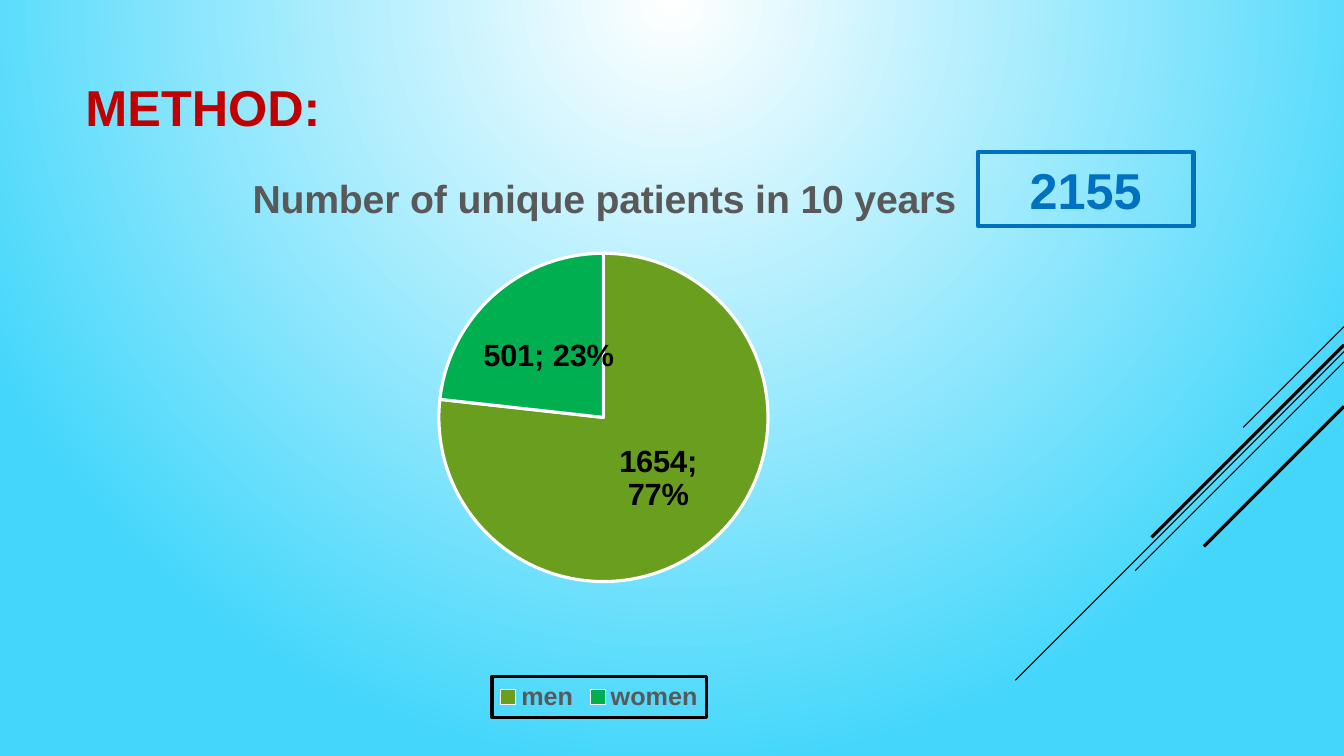
"""Build the slide on unique patients by sex."""
import dataclasses

import lxml.etree
import pptx
import pptx.chart.data
import pptx.dml.color
import pptx.enum.chart
import pptx.enum.shapes
import pptx.enum.text
import pptx.oxml
import pptx.oxml.ns
import pptx.util
from pptx.util import Cm


@dataclasses.dataclass(frozen=True)
class Theme:
    """Colours, fonts and type sizes of the slide."""
    centre: str = "FFFFFF"
    edge: str = "45D7FB"
    ink: str = "000000"
    heading: str = "C00000"
    muted: str = "595959"
    accent: str = "0070C0"
    men: str = "6A9E1F"
    women: str = "00B050"
    font: str = "Arial"
    chart_font: str = "League Spartan"
    heading_size: int = 36
    caption_size: int = 28
    label_size: int = 22
    legend_size: int = 18
    chart_size: int = 10


THEME = Theme()
WIDTH, HEIGHT = 33.87, 19.05
STRIPES = [
    (8.23, 2.54, 0.75),
    (8.86, 8.28, 0.75),
    (9.12, 5.26, 0.75),
    (8.69, 4.85, 2.25),
    (10.24, 3.53, 2.25),
]


def rgb(value):
    """Return a colour object for a hex value."""
    return pptx.dml.color.RGBColor.from_string(value)


def style_font(font, size, colour, bold=True, name=THEME.font):
    """Set the looks of a font."""
    font.name, font.size, font.bold = name, pptx.util.Pt(size), bold
    font.color.rgb = rgb(colour)


def style_line(line, colour, width):
    """Set the colour and width of a line."""
    line.color.rgb = rgb(colour)
    line.width = pptx.util.Pt(width)


def write(para, text, size, colour):
    """Add one styled run to a paragraph."""
    span = para.add_run()
    span.text = text
    style_font(span.font, size, colour)


def paint_background(page):
    """Fill the page with a round gradient centred on its top edge."""
    fill = page.background.fill
    fill.gradient()
    for stop, colour, position in zip(fill.gradient_stops, (THEME.centre, THEME.edge), (0, 1)):
        stop.color.rgb = rgb(colour)
        stop.position = position
    gradient = page.background._cSld.find(".//" + pptx.oxml.ns.qn("a:gradFill"))
    for linear in gradient.findall(pptx.oxml.ns.qn("a:lin")):
        gradient.remove(linear)
    gradient.append(pptx.oxml.parse_xml(
        f'<a:path {pptx.oxml.ns.nsdecls("a")} path="circle">'
        '<a:fillToRect l="0" t="0" r="0" b="100000"/></a:path>'))


def add_stripe(page, top, reach, weight):
    """Draw a diagonal line down and left from the right edge."""
    stripe = page.shapes.add_connector(
        pptx.enum.shapes.MSO_CONNECTOR.STRAIGHT,
        Cm(WIDTH), Cm(top), Cm(WIDTH - reach), Cm(top + reach))
    style_line(stripe.line, THEME.ink, weight)
    lxml.etree.SubElement(stripe._element.spPr, pptx.oxml.ns.qn("a:effectLst"))


def add_heading(page, text):
    """Move and fill the title placeholder."""
    title = page.shapes.title
    title.left, title.top, title.width, title.height = Cm(1.9), Cm(0.58), Cm(23.7), Cm(4.19)
    title.text_frame.vertical_anchor = pptx.enum.text.MSO_ANCHOR.MIDDLE
    para = title.text_frame.paragraphs[0]
    para.alignment = pptx.enum.text.PP_ALIGN.LEFT
    write(para, text, THEME.heading_size, THEME.heading)


def add_total(page, text):
    """Add the framed total."""
    box = page.shapes.add_shape(
        pptx.enum.shapes.MSO_SHAPE.RECTANGLE, Cm(24.64), Cm(3.84), Cm(5.44), Cm(1.85))
    box.shadow.inherit = False
    box.fill.background()
    style_line(box.line, THEME.accent, 3)
    frame = box.text_frame
    frame.word_wrap = True
    frame.vertical_anchor = pptx.enum.text.MSO_ANCHOR.MIDDLE
    para = frame.paragraphs[0]
    para.alignment = pptx.enum.text.PP_ALIGN.CENTER
    write(para, text, THEME.heading_size, THEME.accent)


def place(element, index, inner=False, **shares):
    """Give a chart part a manual layout in shares of the chart."""
    for layout in element.findall(pptx.oxml.ns.qn("c:layout")):
        element.remove(layout)
    target = '<c:layoutTarget val="inner"/>' if inner else ""
    modes = '<c:xMode val="edge"/><c:yMode val="edge"/>'
    values = "".join(f'<c:{key} val="{share}"/>' for key, share in shares.items())
    element.insert(index, pptx.oxml.parse_xml(
        f'<c:layout {pptx.oxml.ns.nsdecls("c")}><c:manualLayout>'
        f'{target}{modes}{values}</c:manualLayout></c:layout>'))


def add_caption(chart, text):
    """Set the chart title."""
    chart.has_title = True
    title = chart.chart_title
    write(title.text_frame.paragraphs[0], text, THEME.caption_size, THEME.muted)
    title.include_in_layout = False
    place(title._element, 1, x=0.17, y=0.05)


def add_legend(chart):
    """Add the framed legend below the pie."""
    chart.has_legend = True
    legend = chart.legend
    legend.position = pptx.enum.chart.XL_LEGEND_POSITION.BOTTOM
    legend.include_in_layout = False
    style_font(legend.font, THEME.legend_size, THEME.muted)
    place(legend._element, 1, x=0.4, y=0.93, w=0.2, h=0.07)
    frame = pptx.oxml.parse_xml(
        f'<c:spPr {pptx.oxml.ns.nsdecls("c", "a")}><a:noFill/><a:ln w="{pptx.util.Pt(2.25)}">'
        f'<a:solidFill><a:srgbClr val="{THEME.ink}"/></a:solidFill></a:ln></c:spPr>')
    legend._element.find(pptx.oxml.ns.qn("c:txPr")).addprevious(frame)


def add_labels(plot):
    """Label each slice with its value and share."""
    plot.has_data_labels = True
    labels = plot.data_labels
    labels.show_value = labels.show_percentage = True
    labels.position = pptx.enum.chart.XL_LABEL_POSITION.CENTER
    style_font(labels.font, THEME.label_size, THEME.ink)
    separator = pptx.oxml.parse_xml(
        f'<c:separator {pptx.oxml.ns.nsdecls("c")}>; </c:separator>')
    labels._element.find(pptx.oxml.ns.qn("c:showPercent")).addnext(separator)
    bubble = labels._element.find(pptx.oxml.ns.qn("c:showBubbleSize"))
    if bubble is not None:
        bubble.addnext(separator)


def add_pie(page):
    """Add the pie of patients by sex."""
    data = pptx.chart.data.CategoryChartData()
    data.categories = ["men", "women"]
    data.add_series("Series 1", [1654, 501])
    chart = page.shapes.add_chart(
        pptx.enum.chart.XL_CHART_TYPE.PIE, Cm(1.6), Cm(3.48), Cm(27), Cm(14.63), data).chart
    style_font(chart.font, THEME.chart_size, THEME.ink, False, THEME.chart_font)
    add_caption(chart, "Number of unique patients in 10 years")
    add_legend(chart)
    plot = chart.plots[0]
    plot.vary_by_categories = True
    for index, colour in enumerate((THEME.men, THEME.women)):
        look = plot.series[0].points[index].format
        look.fill.solid()
        look.fill.fore_color.rgb = rgb(colour)
        style_line(look.line, THEME.centre, 2.25)
    add_labels(plot)
    area = chart._chartSpace.find(".//" + pptx.oxml.ns.qn("c:plotArea"))
    place(area, 0, True, x=0.158, y=0.199, w=0.692, h=0.567)


def main():
    """Build and save the deck."""
    deck = pptx.Presentation()
    deck.slide_width, deck.slide_height = Cm(WIDTH), Cm(HEIGHT)
    page = deck.slides.add_slide(deck.slide_layouts.get_by_name("Title Only"))
    paint_background(page)
    for stripe in STRIPES:
        add_stripe(page, *stripe)
    add_heading(page, "METHOD:")
    add_pie(page)
    add_total(page, "2155")
    deck.save("out.pptx")


if __name__ == "__main__":
    main()
